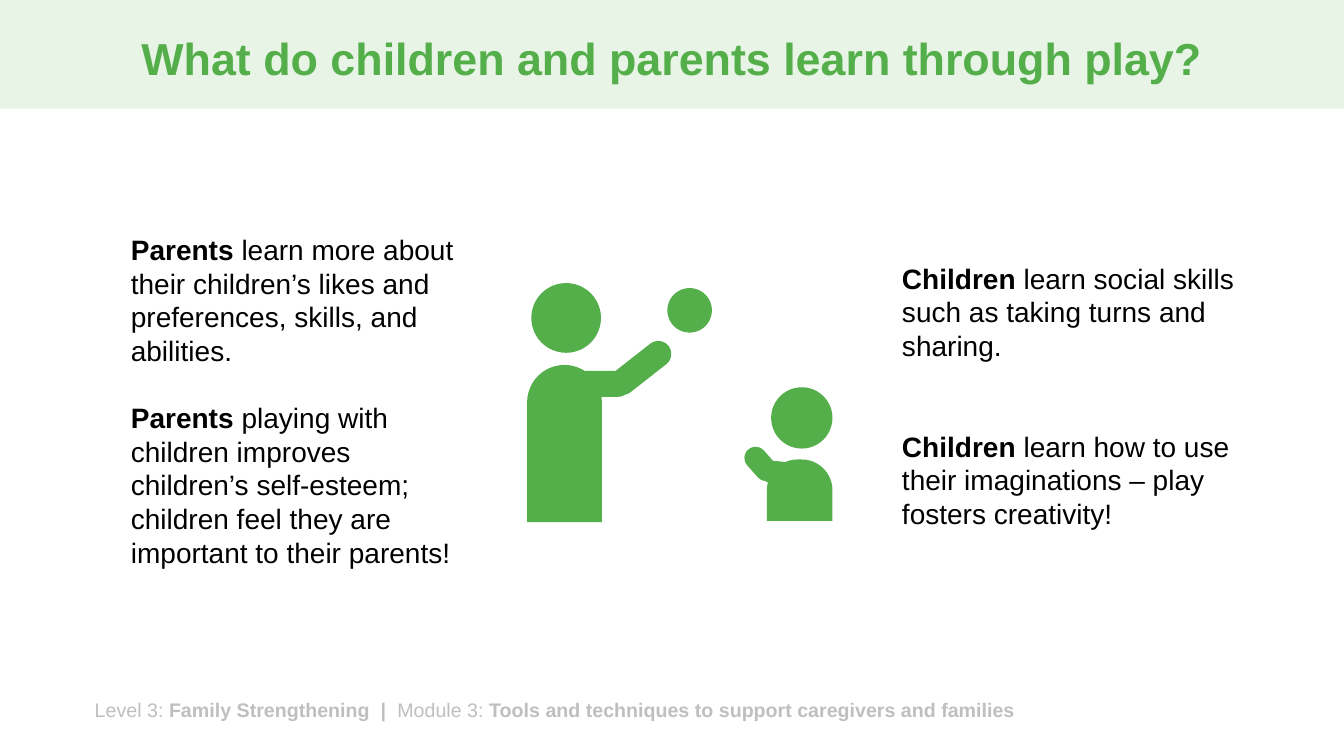
from dataclasses import dataclass

from pptx import Presentation
from pptx.dml.color import RGBColor
from pptx.enum.shapes import MSO_SHAPE
from pptx.enum.text import MSO_ANCHOR, MSO_AUTO_SIZE, PP_ALIGN
from pptx.util import Inches, Length, Pt

RECTANGLE = MSO_SHAPE.RECTANGLE
CIRCLE = MSO_SHAPE.OVAL
LIMB = MSO_SHAPE.ROUNDED_RECTANGLE
TORSO = MSO_SHAPE.ROUND_2_SAME_RECTANGLE
MIDDLE = MSO_ANCHOR.MIDDLE
CENTER = PP_ALIGN.CENTER
NO_AUTOFIT = MSO_AUTO_SIZE.NONE
GROW = MSO_AUTO_SIZE.SHAPE_TO_FIT_TEXT

SLIDE_WIDTH, SLIDE_HEIGHT = Inches(13.33), Inches(7.5)
COLUMNS, ROWS = 32, 18
FONT = "Arial"
GREEN, PALE_GREEN, GRAY, BLACK = "54AF4B", "E8F4E6", "BFBFBF", "000000"


@dataclass(frozen=True)
class Box:
    """A place on the slide, in grid columns and rows."""
    column: float
    row: float
    columns: float
    rows: float

    def lengths(self) -> tuple[Length, Length, Length, Length]:
        column_width, row_height = SLIDE_WIDTH / COLUMNS, SLIDE_HEIGHT / ROWS
        return (Length(self.column * column_width), Length(self.row * row_height),
                Length(self.columns * column_width), Length(self.rows * row_height))


@dataclass(frozen=True)
class FigurePart:
    kind: MSO_SHAPE
    box: Box
    rotation: float = 0


@dataclass(frozen=True)
class TextBlock:
    """Paragraphs of (text, bold) runs; gap is the space between them in points."""
    box: Box
    paragraphs: list[list[tuple[str, bool]]]
    size: float
    color: str
    gap: float = 0


FIGURE_PARTS = [
    FigurePart(TORSO, Box(18.26, 10.94, 1.56, 1.46)),
    FigurePart(CIRCLE, Box(18.36, 9.22, 1.46, 1.46)),
    FigurePart(TORSO, Box(12.55, 8.69, 1.78, 3.74)),
    FigurePart(CIRCLE, Box(12.65, 6.74, 1.66, 1.66)),
    FigurePart(LIMB, Box(13.32, 8.83, 1.7, 0.62)),
    FigurePart(LIMB, Box(14.4, 8.45, 1.7, 0.62), 321.9),
    FigurePart(LIMB, Box(17.66, 10.78, 0.91, 0.53), 48.5),
    FigurePart(CIRCLE, Box(15.89, 6.86, 1.06, 1.06)),
    FigurePart(LIMB, Box(18.1, 10.99, 0.96, 0.53), 5.7),
]

TEXT_BLOCKS = [
    TextBlock(Box(2.02, 16.49, 25.49, 0.82), [
        [("Level 3: ", False), ("Family Strengthening  |  ", True), ("Module 3: ", False),
         ("Tools and techniques to support caregivers and families", True)],
    ], 14, GRAY),
    TextBlock(Box(21.24, 6.1, 9.14, 6.7), [
        [("Children", True),
         (" learn social skills such as taking turns and sharing.", False)],
        [("Children", True),
         (" learn how to use their imaginations – play fosters creativity!", False)],
    ], 20, BLACK, gap=48),
    TextBlock(Box(2.88, 5.42, 8.33, 8.33), [
        [("Parents", True),
         (" learn more about their children’s likes and preferences, skills, and abilities.",
          False)],
        [("Parents", True),
         (" playing with children improves children’s self-esteem; children feel they are "
          "important to their parents!", False)],
    ], 20, BLACK, gap=24),
]


def rgb(color: str) -> RGBColor:
    return RGBColor.from_string(color)


def add_run(paragraph, text: str, *, size: float, color: str, bold: bool = False) -> None:
    run = paragraph.add_run()
    run.text = text
    run.font.name = FONT
    run.font.size = Pt(size)
    run.font.bold = bold
    run.font.color.rgb = rgb(color)


def add_filled_shape(shapes, kind: MSO_SHAPE, box: Box, color: str):
    shape = shapes.add_shape(kind, *box.lengths())
    shape.shadow.inherit = False
    shape.fill.solid()
    shape.fill.fore_color.rgb = rgb(color)
    shape.line.fill.background()
    return shape


def add_title(slide) -> None:
    """Format the title placeholder and lay its band behind it."""
    title = slide.shapes.title
    title.left, title.top, title.width, title.height = Box(2.21, 0.31, 27.6, 2.28).lengths()
    title.text_frame.auto_size = NO_AUTOFIT
    title.text_frame.vertical_anchor = MIDDLE
    paragraph = title.text_frame.paragraphs[0]
    paragraph.alignment = CENTER
    paragraph.line_spacing = 0.9
    add_run(paragraph, "What do children and parents learn through play?",
            size=32, color=GREEN, bold=True)
    band = add_filled_shape(slide.shapes, RECTANGLE, Box(0, 0, COLUMNS, 2.59), PALE_GREEN)
    title.element.addprevious(band.element)


def add_figures(slide) -> None:
    group = slide.shapes.add_group_shape()
    for part in FIGURE_PARTS:
        shape = add_filled_shape(group.shapes, part.kind, part.box, GREEN)
        shape.rotation = part.rotation
        if part.kind != CIRCLE:
            shape.adjustments[0] = 0.5


def add_text_block(slide, block: TextBlock) -> None:
    frame = slide.shapes.add_textbox(*block.box.lengths()).text_frame
    frame.word_wrap = True
    frame.auto_size = GROW
    for index, runs in enumerate(block.paragraphs):
        paragraph = frame.add_paragraph() if index else frame.paragraphs[0]
        if index:
            paragraph.space_before = Pt(block.gap)
        for text, bold in runs:
            add_run(paragraph, text, size=block.size, color=block.color, bold=bold)


def main() -> None:
    presentation = Presentation()
    presentation.slide_width, presentation.slide_height = SLIDE_WIDTH, SLIDE_HEIGHT
    slide = presentation.slides.add_slide(presentation.slide_layouts.get_by_name("Title Only"))
    add_title(slide)
    add_figures(slide)
    for block in TEXT_BLOCKS:
        add_text_block(slide, block)
    presentation.save("out.pptx")


if __name__ == "__main__":
    main()
